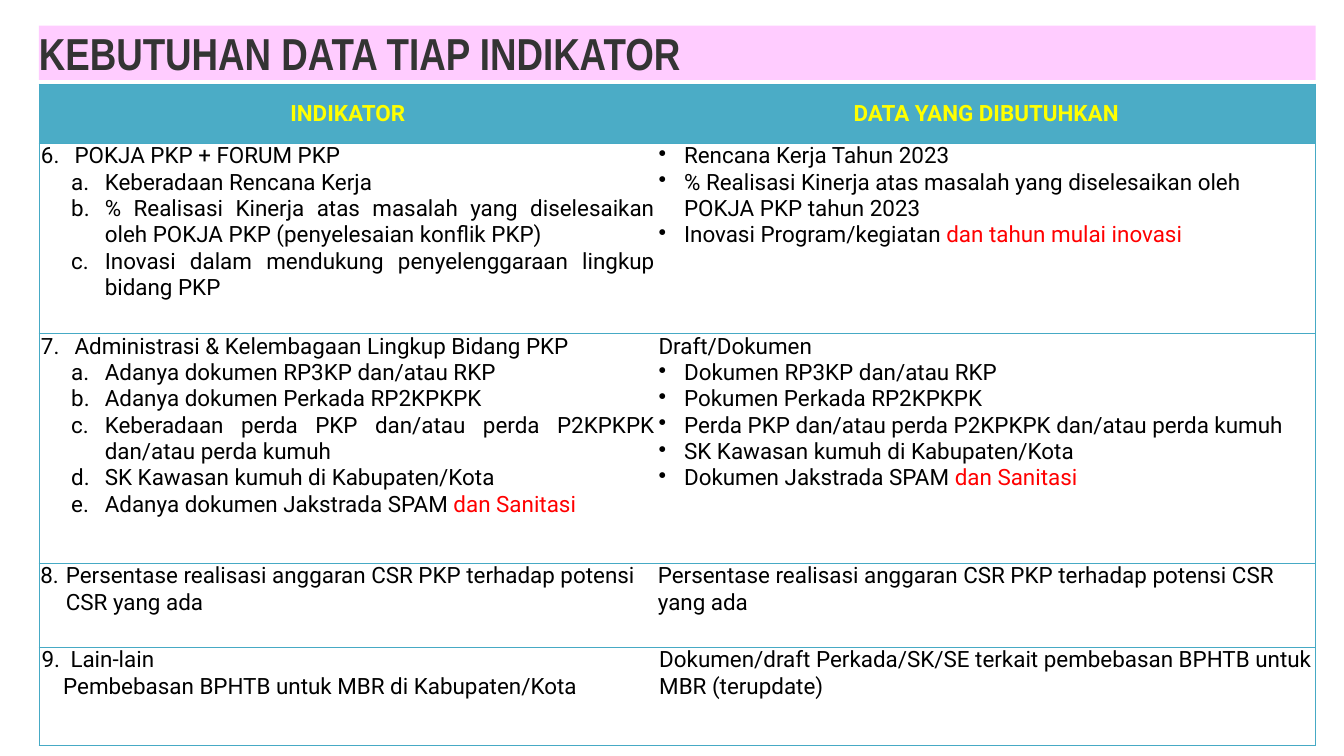
import lxml.etree
import pptx
import pptx.dml.color
import pptx.enum.text
import pptx.oxml.ns
import pptx.util

Inches = pptx.util.Inches
Pt = pptx.util.Pt
Align = pptx.enum.text.PP_ALIGN
Anchor = pptx.enum.text.MSO_ANCHOR
qn = pptx.oxml.ns.qn

TITLE = "KEBUTUHAN DATA TIAP INDIKATOR"
HEADERS = ["INDIKATOR", "DATA YANG DIBUTUHKAN"]
# Each paragraph is (layout, text, highlighted ending).
ROWS = [
    (
        [
            ("number 6", "POKJA PKP + FORUM PKP", ""),
            ("letter", "Keberadaan Rencana Kerja", ""),
            ("letter", "% Realisasi Kinerja atas masalah yang diselesaikan oleh POKJA PKP (penyelesaian konflik PKP)", ""),
            ("letter", "Inovasi dalam mendukung penyelenggaraan lingkup bidang PKP", ""),
        ],
        [
            ("bullet", "Rencana Kerja Tahun 2023", ""),
            ("bullet", "% Realisasi Kinerja atas masalah yang diselesaikan oleh POKJA PKP tahun 2023", ""),
            ("bullet", "Inovasi Program/kegiatan ", "dan tahun mulai inovasi"),
        ],
    ),
    (
        [
            ("number 7", "Administrasi & Kelembagaan Lingkup Bidang PKP", ""),
            ("letter", "Adanya dokumen RP3KP dan/atau RKP", ""),
            ("letter", "Adanya dokumen Perkada RP2KPKPK", ""),
            ("letter", "Keberadaan perda PKP dan/atau perda P2KPKPK dan/atau perda kumuh", ""),
            ("letter", "SK Kawasan kumuh di Kabupaten/Kota", ""),
            ("letter", "Adanya dokumen Jakstrada SPAM ", "dan Sanitasi"),
        ],
        [
            ("plain", "Draft/Dokumen", ""),
            ("bullet", "Dokumen RP3KP dan/atau RKP", ""),
            ("bullet", "Pokumen Perkada RP2KPKPK", ""),
            ("bullet", "Perda PKP dan/atau perda P2KPKPK dan/atau perda kumuh", ""),
            ("bullet", "SK Kawasan kumuh di Kabupaten/Kota", ""),
            ("bullet", "Dokumen Jakstrada SPAM ", "dan Sanitasi"),
        ],
    ),
    (
        [("hanging", "8.\tPersentase realisasi anggaran CSR PKP terhadap potensi CSR yang ada", "")],
        [("plain", "Persentase realisasi anggaran CSR PKP terhadap potensi CSR yang ada", "")],
    ),
    (
        [
            ("wide hanging", "9.\tLain-lain", ""),
            ("indented", "Pembebasan BPHTB untuk MBR di Kabupaten/Kota", ""),
        ],
        [("plain", "Dokumen/draft Perkada/SK/SE terkait pembebasan BPHTB untuk MBR (terupdate)", "")],
    ),
]

THEME = {
    "title": {"name": "Arial Narrow", "size": Pt(48), "bold": True, "color": "343434"},
    "header": {"name": "Roboto", "size": Pt(24), "bold": True, "color": "FFFF00"},
    "body": {"name": "Roboto", "size": Pt(24), "bold": False, "color": "000000"},
    "highlight": {"name": "Roboto", "size": Pt(24), "bold": False, "color": "FF0000"},
    "title_fill": "FFCCFF",
    "header_fill": "4BACC6",
    "border": "46AAC5",
}

SLIDE = (20, 11.25)
LEFT = 0.58
TITLE_TOP, TITLE_HEIGHT = 0.38, 0.81
TABLE_TOP = 1.25
COLUMNS = [9.19, 9.81]
ROW_HEIGHTS = [0.88, 2.83, 3.42, 1.25, 1.46]
SIDE_MARGINS = [0.03, 0.03, 0.03, 0.02, 0.04]

# Left margin, first-line indent, alignment, marker tag, marker attributes.
NUMBER = (0.5, -0.5, Align.JUSTIFY, "a:buAutoNum")
LAYOUTS = {
    "plain": (0, 0, Align.LEFT, "a:buNone", {}),
    "centred": (0, 0, Align.CENTER, "a:buNone", {}),
    "hanging": (0.38, -0.38, Align.LEFT, "a:buNone", {}),
    "wide hanging": (0.43, -0.43, Align.LEFT, "a:buNone", {}),
    "indented": (0.38, -0.06, Align.LEFT, "a:buNone", {}),
    "bullet": (0.38, -0.38, Align.LEFT, "a:buChar", {"char": "•"}),
    "number 6": (*NUMBER, {"type": "arabicPeriod", "startAt": "6"}),
    "number 7": (*NUMBER, {"type": "arabicPeriod", "startAt": "7"}),
    "letter": (0.95, -0.5, Align.JUSTIFY, "a:buAutoNum", {"type": "alphaLcPeriod"}),
}


def rgb(value):
    return pptx.dml.color.RGBColor.from_string(value)


def set_attributes(target, values):
    for name, value in values.items():
        setattr(target, name, value)


def add_span(para, text, style):
    span = para.add_run()
    span.text = text
    for name, value in THEME[style].items():
        if name == "color":
            span.font.color.rgb = rgb(value)
        else:
            setattr(span.font, name, value)


def fill_paragraphs(frame, items, style):
    for index, (layout, text, ending) in enumerate(items):
        para = frame.paragraphs[0] if index == 0 else frame.add_paragraph()
        margin, indent, alignment, marker, attributes = LAYOUTS[layout]
        para.alignment = alignment
        properties = para._p.get_or_add_pPr()
        properties.set("marL", str(Inches(margin)))
        properties.set("indent", str(Inches(indent)))
        lxml.etree.SubElement(properties, qn(marker), attributes)
        add_span(para, text, style)
        if ending:
            add_span(para, ending, "highlight")


def set_borders(cell, visible):
    properties = cell._tc.get_or_add_tcPr()
    for index, side in enumerate("LRTB"):
        line = lxml.etree.Element(qn(f"a:ln{side}"), w=str(Pt(0.75)))
        if side in visible:
            fill = lxml.etree.SubElement(line, qn("a:solidFill"))
            lxml.etree.SubElement(fill, qn("a:srgbClr"), val=THEME["border"])
        else:
            lxml.etree.SubElement(line, qn("a:noFill"))
        properties.insert(index, line)


def add_title(page):
    box = page.shapes.title
    set_attributes(box, {
        "left": Inches(LEFT), "top": Inches(TITLE_TOP),
        "width": Inches(sum(COLUMNS)), "height": Inches(TITLE_HEIGHT),
    })
    box.fill.solid()
    box.fill.fore_color.rgb = rgb(THEME["title_fill"])
    set_attributes(box.text_frame, {
        "margin_left": 0, "margin_right": 0, "margin_top": 0, "margin_bottom": 0,
        "word_wrap": True, "vertical_anchor": Anchor.TOP,
        "auto_size": pptx.enum.text.MSO_AUTO_SIZE.SHAPE_TO_FIT_TEXT,
    })
    fill_paragraphs(box.text_frame, [("plain", TITLE, "")], "title")


def add_indicator_table(page):
    table = page.shapes.add_table(
        len(ROW_HEIGHTS), len(COLUMNS), Inches(LEFT), Inches(TABLE_TOP),
        Inches(sum(COLUMNS)), Inches(sum(ROW_HEIGHTS)),
    ).table
    set_attributes(table, {"first_row": False, "horz_banding": False})
    for column, width in zip(table.columns, COLUMNS):
        column.width = Inches(width)
    header = [[("centred", text, "")] for text in HEADERS]
    for row, cells in enumerate([header, *ROWS]):
        table.rows[row].height = Inches(ROW_HEIGHTS[row])
        margin = Inches(SIDE_MARGINS[row])
        for column, items in enumerate(cells):
            cell = table.cell(row, column)
            set_attributes(cell, {
                "margin_left": margin, "margin_right": margin,
                "margin_top": 0, "margin_bottom": 0,
                "vertical_anchor": Anchor.TOP if row else Anchor.MIDDLE,
            })
            if row:
                cell.fill.background()
            else:
                cell.fill.solid()
                cell.fill.fore_color.rgb = rgb(THEME["header_fill"])
            set_borders(cell, "LR"[column] + ("TB" if row else "T"))
            fill_paragraphs(cell.text_frame, items, "body" if row else "header")


def main():
    deck = pptx.Presentation()
    deck.slide_width, deck.slide_height = map(Inches, SLIDE)
    page = deck.slides.add_slide(deck.slide_layouts[5])
    add_title(page)
    add_indicator_table(page)
    deck.save("out.pptx")


if __name__ == "__main__":
    main()
